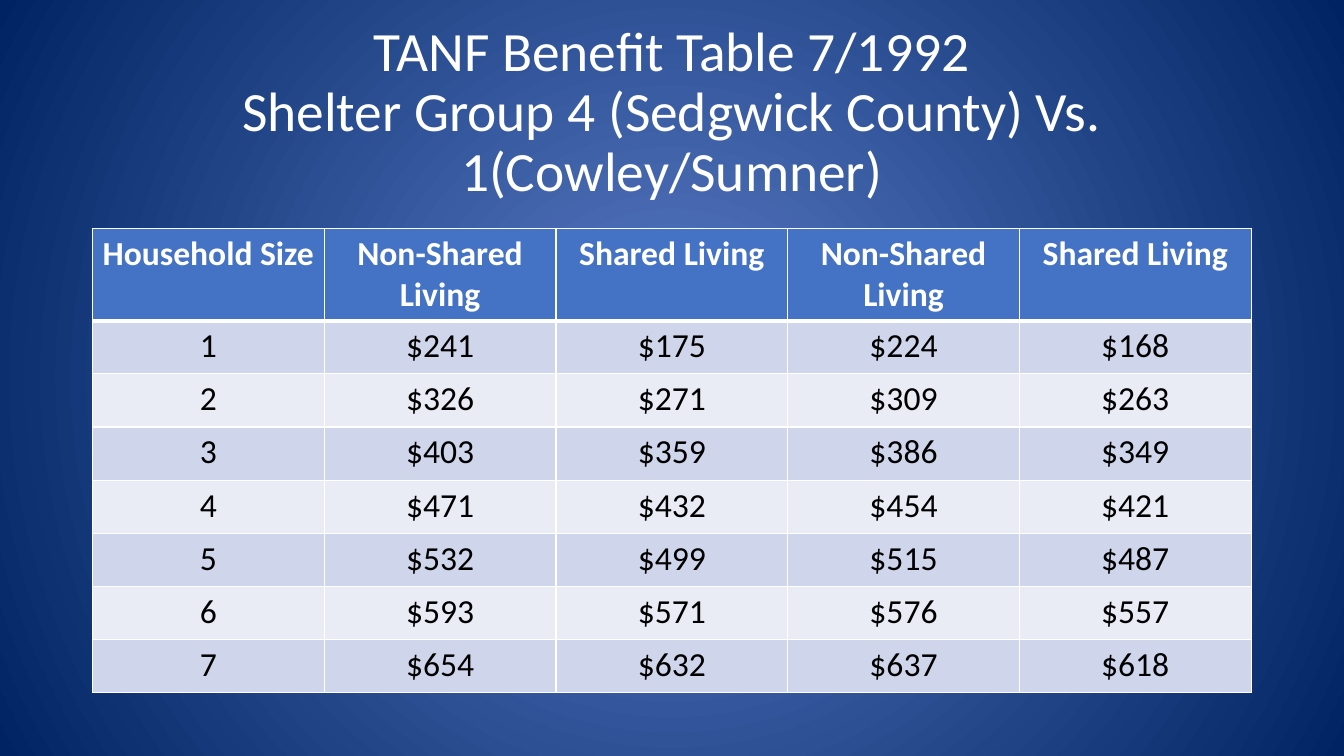
"""Build the TANF benefit table slide."""
import lxml.etree
import pptx
import pptx.dml.color
import pptx.enum.text
import pptx.oxml.ns
import pptx.util

Cm = pptx.util.Cm
Pt = pptx.util.Pt
qn = pptx.oxml.ns.qn
CENTER = pptx.enum.text.PP_ALIGN.CENTER


def rgb(value):
    return pptx.dml.color.RGBColor.from_string(value)


def style(p, color, **font):
    p.alignment = CENTER
    p.font.color.rgb = rgb(color)
    for name, value in {"name": "Calibri", **font}.items():
        setattr(p.font, name, value)


TITLE = [
    "TANF Benefit Table 7/1992",
    "Shelter Group 4 (Sedgwick County) Vs. 1(Cowley/Sumner)",
]
ROWS = [
    ["Household Size", "Non-Shared Living", "Shared Living", "Non-Shared Living", "Shared Living"],
    ["1", "$241", "$175", "$224", "$168"],
    ["2", "$326", "$271", "$309", "$263"],
    ["3", "$403", "$359", "$386", "$349"],
    ["4", "$471", "$432", "$454", "$421"],
    ["5", "$532", "$499", "$515", "$487"],
    ["6", "$593", "$571", "$576", "$557"],
    ["7", "$654", "$632", "$637", "$618"],
]
LEFT, COL_W, HEADER_H, ROW_H = 2.33, 5.84, 2.32, 1.34
WIDTH = COL_W * len(ROWS[0])

prs = pptx.Presentation()
prs.slide_width, prs.slide_height = Cm(33.87), Cm(19.05)
s = prs.slides.add_slide(prs.slide_layouts[6])

fill = s.background.fill
fill.gradient()
for stop, color in zip(fill.gradient_stops, ["5B7CC6", "002463"]):
    stop.color.rgb = rgb(color)
grad = next(s.element.iter(qn("a:gradFill")))
grad.remove(grad.find(qn("a:lin")))
circle = lxml.etree.SubElement(grad, qn("a:path"), path="circle")
lxml.etree.SubElement(circle, qn("a:fillToRect"), {side: "50000" for side in "ltrb"})

sp = s.shapes.add_textbox(Cm(LEFT), Cm(1.02), Cm(WIDTH), Cm(3.68))
tf = sp.text_frame
tf.word_wrap = True
tf.vertical_anchor = pptx.enum.text.MSO_ANCHOR.MIDDLE
p = tf.paragraphs[0]
p.text = "\v".join(TITLE)
p.line_spacing = 0.9
style(p, "FFFFFF", size=Pt(39.6))

height = HEADER_H + ROW_H * (len(ROWS) - 1)
table = s.shapes.add_table(
    len(ROWS), len(ROWS[0]), Cm(LEFT), Cm(5.76), Cm(WIDTH), Cm(height)
).table
for col in table.columns:
    col.width = Cm(COL_W)

for i, values in enumerate(ROWS):
    header = i == 0
    table.rows[i].height = Cm(HEADER_H if header else ROW_H)
    for j, value in enumerate(values):
        cell = table.cell(i, j)
        p = cell.text_frame.paragraphs[0]
        p.text = value
        style(p, "FFFFFF" if header else "000000", size=Pt(24), bold=header)
        borders = {"L": 1, "R": 1, "T": 3 if i == 1 else 1, "B": 3 if header else 1}
        tc_pr = cell._tc.get_or_add_tcPr()
        for side, width in borders.items():
            ln = lxml.etree.SubElement(tc_pr, qn("a:ln" + side), w=str(Pt(width)))
            solid = lxml.etree.SubElement(ln, qn("a:solidFill"))
            lxml.etree.SubElement(solid, qn("a:srgbClr"), val="FFFFFF")
        cell.fill.solid()
        cell.fill.fore_color.rgb = rgb("4472C4" if header else "CFD5EA" if i % 2 else "E9EBF5")

prs.save("out.pptx")
